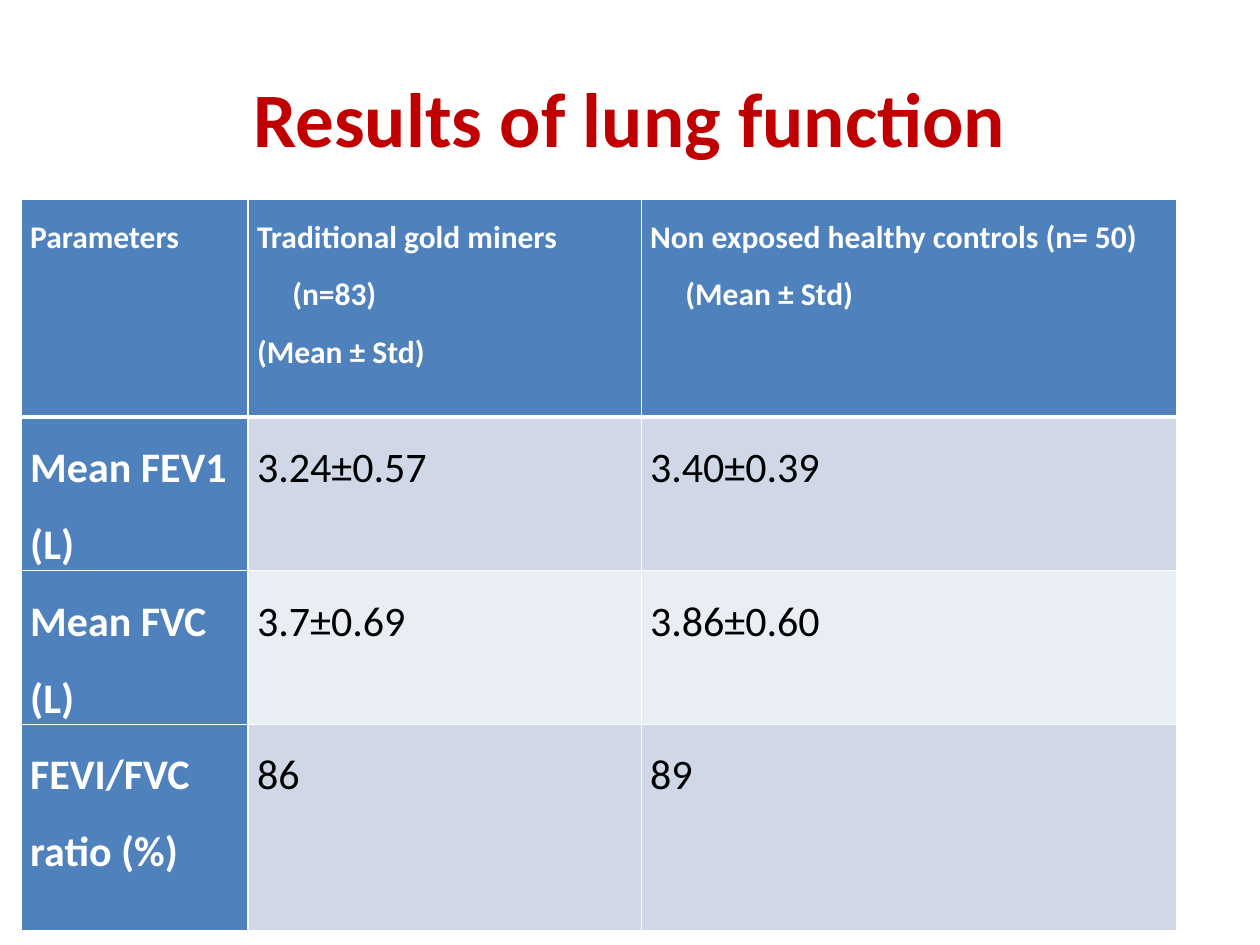
from lxml import etree
from pptx import Presentation
from pptx.dml.color import RGBColor
from pptx.enum.text import MSO_ANCHOR, PP_ALIGN
from pptx.oxml.ns import qn
from pptx.util import Inches, Pt

# Content: each cell is a list of paragraphs
TITLE = "Results of lung function"
ROWS = [
    [["Parameters"],
     ["Traditional gold miners", "(n=83)", "(Mean ± Std)"],
     ["Non exposed healthy controls (n= 50)", "(Mean ± Std)"]],
    [["Mean FEV1 (L)"], ["3.24±0.57"], ["3.40±0.39"]],
    [["Mean FVC (L)"], ["3.7±0.69"], ["3.86±0.60"]],
    [["FEVI/FVC ratio (%)"], ["86"], ["89"]],
]
COLUMN_WIDTHS = [1.8, 3.12, 4.25]
ROW_HEIGHTS = [1.73, 1.22, 1.22, 1.64]
COLORS = {"title": "C00000", "header": "4F81BD", "odd": "D0D8E8",
          "even": "E9EDF4", "light": "FFFFFF", "dark": "000000"}
FONT = "Calibri"


def rgb(name):
    return RGBColor.from_string(COLORS[name])


def style_paragraph(paragraph, size, color, bold):
    font = paragraph.font
    font.name, font.size, font.bold = FONT, Pt(size), bold
    font.color.rgb = rgb(color)


def add_border(cell, side, width):
    line = etree.SubElement(cell._tc.get_or_add_tcPr(), qn(f"a:ln{side}"), w=str(Pt(width)))
    fill = etree.SubElement(line, qn("a:solidFill"))
    etree.SubElement(fill, qn("a:srgbClr"), val=COLORS["light"])


def fill_cell(cell, lines, row, column):
    is_header = row == 0 or column == 0
    # The rule below the header row is heavier
    for side in "LRTB":
        heavy = (row, side) in ((0, "B"), (1, "T"))
        add_border(cell, side, 3 if heavy else 1)
    cell.fill.solid()
    cell.fill.fore_color.rgb = rgb("header" if is_header else "odd" if row % 2 else "even")
    cell.margin_left = cell.margin_right = Inches(0.07)
    cell.margin_top = cell.margin_bottom = 0

    frame = cell.text_frame
    frame.text = "\n".join(lines)
    for index, paragraph in enumerate(frame.paragraphs):
        paragraph.line_spacing = 1.5
        style_paragraph(paragraph, 18 if row == 0 else 24,
                        "light" if is_header else "dark", is_header)
        if index == 1:  # second header line is indented
            paragraph._p.get_or_add_pPr().set("marL", str(Inches(0.28)))


presentation = Presentation()
presentation.slide_width, presentation.slide_height = Inches(10), Inches(7.5)
slide = presentation.slides.add_slide(presentation.slide_layouts[6])

# Title
title = slide.shapes.add_textbox(Inches(0.5), Inches(0.3), Inches(9), Inches(1.25))
title_frame = title.text_frame
title_frame.word_wrap = True
title_frame.vertical_anchor = MSO_ANCHOR.MIDDLE
title_frame.text = TITLE
title_frame.paragraphs[0].alignment = PP_ALIGN.CENTER
style_paragraph(title_frame.paragraphs[0], 44, "title", True)

# Results table
results = slide.shapes.add_table(
    len(ROWS), len(COLUMN_WIDTHS), Inches(0.17), Inches(1.58),
    Inches(sum(COLUMN_WIDTHS)), Inches(sum(ROW_HEIGHTS))).table
for column, width in zip(results.columns, COLUMN_WIDTHS):
    column.width = Inches(width)
for table_row, height in zip(results.rows, ROW_HEIGHTS):
    table_row.height = Inches(height)
for row, cells in enumerate(ROWS):
    for column, lines in enumerate(cells):
        fill_cell(results.cell(row, column), lines, row, column)

presentation.save("out.pptx")
